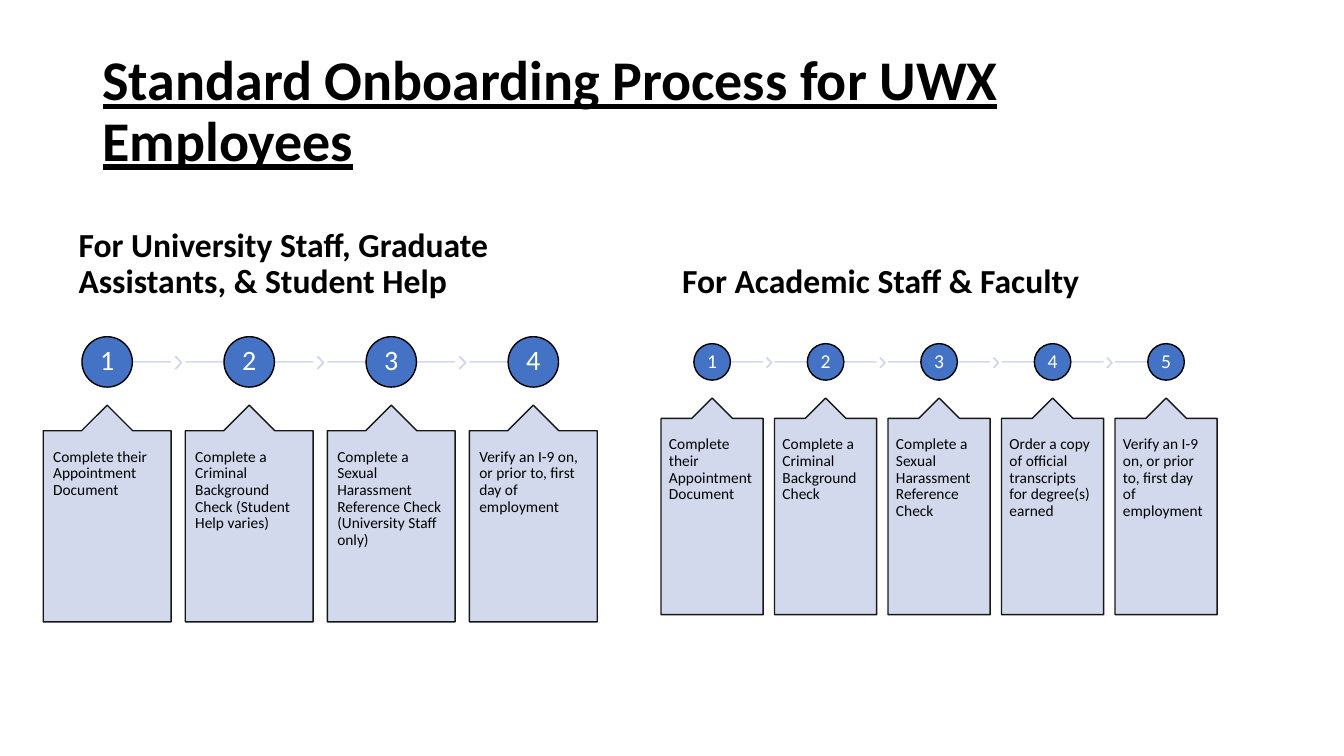
from dataclasses import dataclass

from lxml import etree
from pptx import Presentation
from pptx.dml.color import RGBColor
from pptx.enum import shapes, text
from pptx.oxml.ns import qn
from pptx.util import Cm, Pt

COLORS = {"ink": "000000", "circle": "4472C4", "pale": "CFD5EA", "white": "FFFFFF"}
FONT = "Calibri"
AXIS_Y = 9.12
CALLOUT_HEIGHT = 5.46


@dataclass
class Process:
    heading: str
    heading_left: float
    heading_width: float
    left: float
    pitch: float
    circle: float
    number_size: int
    callout_top: float
    inset: float
    steps: list[str]


PROCESSES = [
    Process(
        "For University Staff, Graduate Assistants, & Student Help",
        1.73, 14.33, 1.09, 3.58, 1.27, 20, 10.21, 0.25,
        [
            "Complete their Appointment Document",
            "Complete a Criminal Background Check (Student Help varies)",
            "Complete a Sexual Harassment Reference Check (University Staff only)",
            "Verify an I-9 on, or prior to, first day of employment",
        ],
    ),
    Process(
        "For Academic Staff & Faculty",
        16.94, 14.4, 16.66, 2.86, 0.92, 14, 10.03, 0.2,
        [
            "Complete their Appointment Document",
            "Complete a Criminal Background Check",
            "Complete a Sexual Harassment Reference Check",
            "Order a copy of official transcripts for degree(s) earned",
            "Verify an I-9 on, or prior to, first day of employment",
        ],
    ),
]


def rgb(name: str) -> RGBColor:
    return RGBColor.from_string(COLORS[name])


def make_translucent(sp) -> None:
    """Give the solid fill and the line 90 % opacity."""
    for color in sp._element.spPr.iter(qn("a:srgbClr")):
        etree.SubElement(color, qn("a:alpha"), val="90000")


def write(sp, words: str, size: int, color: str = "ink", bold: bool = False,
          align=text.PP_ALIGN.LEFT, anchor=text.MSO_ANCHOR.TOP):
    tf = sp.text_frame
    tf.word_wrap = True
    tf.auto_size = text.MSO_AUTO_SIZE.NONE
    tf.vertical_anchor = anchor
    p = tf.paragraphs[0]
    p.text = words
    p.alignment = align
    p.line_spacing = 0.9
    p.font.name = FONT
    p.font.size = Pt(size)
    p.font.bold = bold
    p.font.color.rgb = rgb(color)
    return p


def set_insets(sp, side: float, vertical: float) -> None:
    tf = sp.text_frame
    tf.margin_left = tf.margin_right = Cm(side)
    tf.margin_top = tf.margin_bottom = Cm(vertical)


def add_shape(s, kind, left: float, top: float, width: float, height: float,
              fill: str, line: str):
    sp = s.shapes.add_shape(kind, Cm(left), Cm(top), Cm(width), Cm(height))
    sp.shadow.inherit = False
    sp.fill.solid()
    sp.fill.fore_color.rgb = rgb(fill)
    sp.line.color.rgb = rgb(line)
    sp.line.width = Pt(1)
    return sp


def add_track(s, start: float, end: float) -> None:
    track = s.shapes.add_connector(
        shapes.MSO_CONNECTOR.STRAIGHT, Cm(start), Cm(AXIS_Y), Cm(end), Cm(AXIS_Y))
    track.line.color.rgb = rgb("pale")
    track.line.width = Pt(1)
    make_translucent(track)
    etree.SubElement(track._element.spPr, qn("a:effectLst"))


def add_step(s, process: Process, index: int) -> None:
    pitch, diameter = process.pitch, process.circle
    width = 0.9 * pitch
    left = process.left + index * pitch
    right, center = left + width, left + width / 2
    first, last = index == 0, index == len(process.steps) - 1

    add_track(s, center if first else left, center if last else right)
    if not last:
        height = 0.085 * pitch
        chevron = add_shape(s, shapes.MSO_SHAPE.CHEVRON, right + 0.03 * pitch,
                            AXIS_Y + 0.02 - height / 2, 0.045 * pitch, height,
                            "pale", "pale")
        chevron.adjustments[0] = 0.9
        make_translucent(chevron)

    circle = add_shape(s, shapes.MSO_SHAPE.OVAL, center - diameter / 2,
                       AXIS_Y - diameter / 2, diameter, diameter, "circle", "ink")
    set_insets(circle, 0.04, 0.04)
    write(circle, str(index + 1), process.number_size, "white",
          align=text.PP_ALIGN.CENTER, anchor=text.MSO_ANCHOR.MIDDLE)

    callout = add_shape(s, shapes.MSO_SHAPE.UP_ARROW_CALLOUT, left,
                        process.callout_top, width, CALLOUT_HEIGHT, "pale", "ink")
    for i, value in enumerate((0.5, 0.2, 0.2, 1)):
        callout.adjustments[i] = value
    make_translucent(callout)
    set_insets(callout, process.inset, 0.46)
    write(callout, process.steps[index], 11)


def add_process(s, process: Process) -> None:
    heading = s.shapes.add_textbox(Cm(process.heading_left), Cm(5.41),
                                   Cm(process.heading_width), Cm(2.29))
    write(heading, process.heading, 24, bold=True, anchor=text.MSO_ANCHOR.BOTTOM)
    for index in range(len(process.steps)):
        add_step(s, process, index)


def main() -> None:
    prs = Presentation()
    prs.slide_width, prs.slide_height = Cm(33.87), Cm(19.05)
    s = prs.slides.add_slide(prs.slide_layouts[5])
    title = s.shapes.title
    title.left, title.top, title.width, title.height = Cm(2.33), Cm(1.01), Cm(29.21), Cm(3.68)
    p = write(title, "Standard Onboarding Process for UWX Employees", 40, bold=True,
              anchor=text.MSO_ANCHOR.MIDDLE)
    p.font.underline = True
    for process in PROCESSES:
        add_process(s, process)
    prs.save("out.pptx")


if __name__ == "__main__":
    main()
